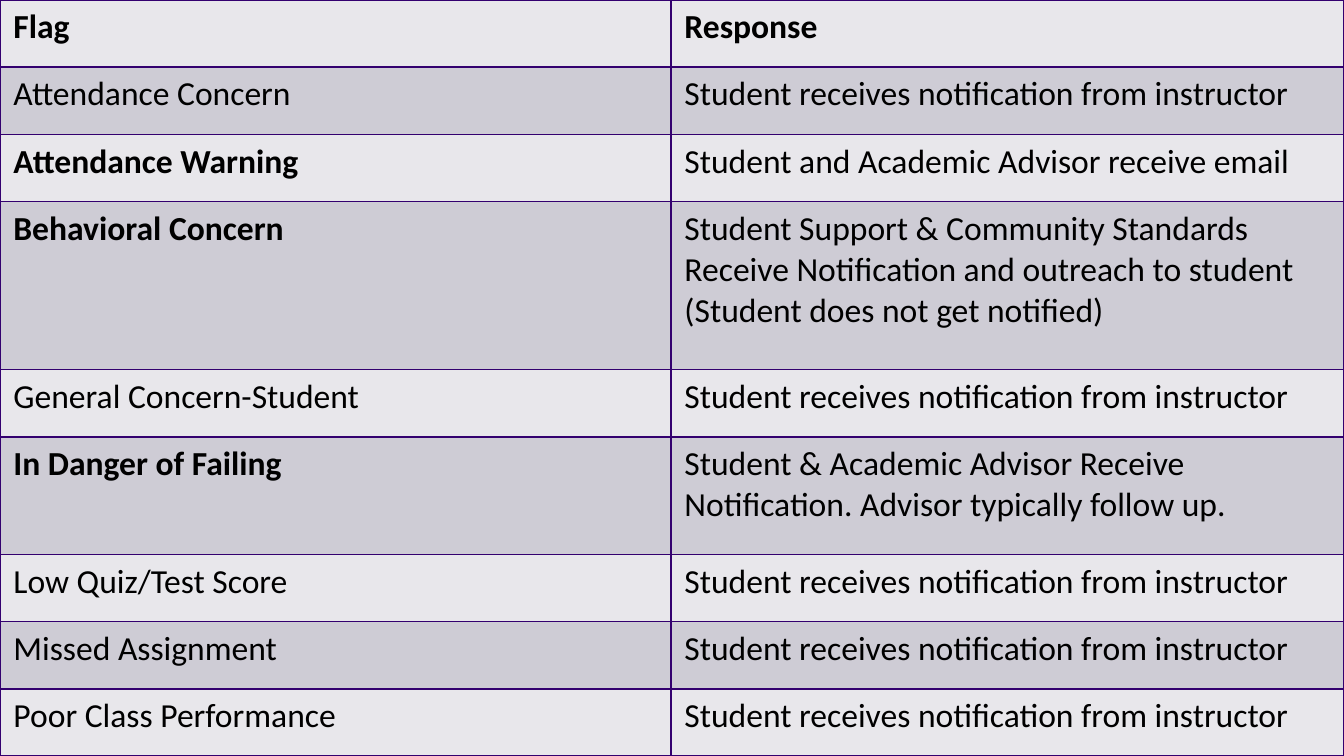
from pptx import Presentation
from pptx.dml.color import RGBColor
from pptx.oxml import parse_xml
from pptx.oxml.ns import nsdecls
from pptx.util import Pt

BLACK = RGBColor(0x00, 0x00, 0x00)
PURPLE = RGBColor(0x33, 0x00, 0x6F)
LIGHT_BAND = RGBColor(0xE8, 0xE7, 0xEB)
DARK_BAND = RGBColor(0xCE, 0xCC, 0xD5)

SLIDE_WIDTH, SLIDE_HEIGHT = 720, 405
COLUMN_WIDTHS = (359.5, 360.5)
ROW_HEIGHT = 36
INSTRUCTOR_NOTICE = "Student receives notification from instructor"

FLAGS = [
    ("Flag", "Response", True, ROW_HEIGHT),
    ("Attendance Concern", INSTRUCTOR_NOTICE, False, ROW_HEIGHT),
    ("Attendance Warning", "Student and Academic Advisor receive email", True, ROW_HEIGHT),
    ("Behavioral Concern",
     "Student Support & Community Standards Receive Notification and outreach "
     "to student (Student does not get notified)", True, 90),
    ("General Concern-Student", INSTRUCTOR_NOTICE, False, ROW_HEIGHT),
    ("In Danger of Failing",
     "Student & Academic Advisor Receive Notification. Advisor typically follow up.",
     True, 63),
    ("Low Quiz/Test Score", INSTRUCTOR_NOTICE, False, ROW_HEIGHT),
    ("Missed Assignment", INSTRUCTOR_NOTICE, False, ROW_HEIGHT),
    ("Poor Class Performance", INSTRUCTOR_NOTICE, False, ROW_HEIGHT),
]


def write_text(frame, text, *, font="Calibri", size=18, color=BLACK, bold=False):
    span = frame.paragraphs[0].add_run()
    span.text = text
    span.font.name = font
    span.font.size = Pt(size)
    span.font.color.rgb = color
    span.font.bold = bold


class FlagPage:
    def __init__(self, page, border_color=PURPLE, border_width=1):
        self.page = page
        self.border_color = border_color
        self.border_width = border_width

    def border(self, cell):
        properties = cell._tc.get_or_add_tcPr()
        for side in ("lnL", "lnR", "lnT", "lnB"):
            properties.append(parse_xml(
                f'<a:{side} {nsdecls("a")} w="{Pt(self.border_width)}">'
                f'<a:solidFill><a:srgbClr val="{self.border_color}"/></a:solidFill>'
                f'</a:{side}>'))

    def cell(self, cell, text, fill, bold):
        self.border(cell)
        cell.fill.solid()
        cell.fill.fore_color.rgb = fill
        write_text(cell.text_frame, text, bold=bold)

    def table(self, rows):
        frame = self.page.shapes.add_table(
            len(rows), len(COLUMN_WIDTHS), Pt(0), Pt(0), Pt(SLIDE_WIDTH), Pt(SLIDE_HEIGHT))
        table = frame.table
        for column, width in zip(table.columns, COLUMN_WIDTHS):
            column.width = Pt(width)
        for index, (flag, response, bold, height) in enumerate(rows):
            fill = DARK_BAND if index % 2 else LIGHT_BAND
            table.rows[index].height = Pt(height)
            self.cell(table.cell(index, 0), flag, fill, bold)
            self.cell(table.cell(index, 1), response, fill, index == 0)


def main():
    deck = Presentation()
    deck.slide_width = Pt(SLIDE_WIDTH)
    deck.slide_height = Pt(SLIDE_HEIGHT)
    page = deck.slides.add_slide(deck.slide_layouts[6])
    FlagPage(page).table(FLAGS)
    deck.save("out.pptx")


if __name__ == "__main__":
    main()
